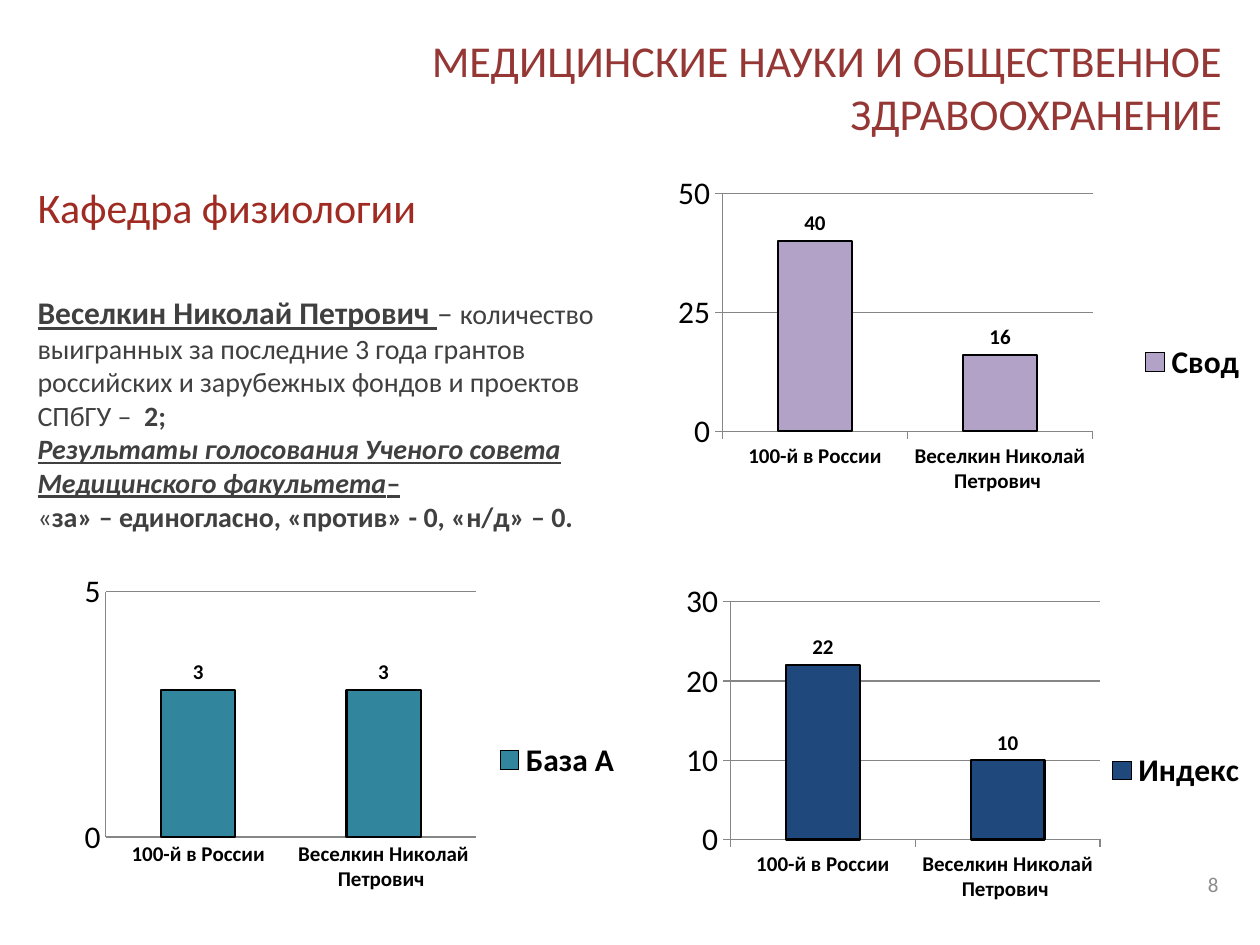
from pptx import Presentation, util as u
from pptx.chart.data import CategoryChartData
from pptx.dml.color import RGBColor
from pptx.enum import chart as charts, text
from pptx.oxml import parse_xml
from pptx.oxml.ns import nsdecls

THEME = {
    "font": "Calibri",
    "title": "953735", "heading": "9F2B22", "body": "404040",
    "number": "8C8C8C", "ink": "000000", "grid": "868686",
    "title_size": 25.2, "heading_size": 24, "lead_size": 18,
    "body_size": 16, "axis_size": 18, "small_size": 12,
}

TITLE = "МЕДИЦИНСКИЕ НАУКИ И ОБЩЕСТВЕННОЕ ЗДРАВООХРАНЕНИЕ"
HEADING = "Кафедра физиологии"
LEAD = {"size": THEME["lead_size"]}
BODY = [
    [("Веселкин Николай Петрович ", {**LEAD, "bold": True, "underline": True}),
     ("– ", LEAD),
     ("количество выигранных за последние 3 года грантов российских и "
      "зарубежных фондов и проектов СПбГУ – ", {}),
     (" 2;", {"bold": True})],
    [("Результаты голосования Ученого совета Медицинского факультета",
      {"bold": True, "italic": True, "underline": True}),
     ("–", {"bold": True, "underline": True})],
    [("«", {}),
     ("за» – единогласно, «против» - 0, «н/д» – 0.", {"bold": True})],
]
CATEGORIES = ["100-й в России", "Веселкин Николай Петрович "]
CHART_SIZE = (4.92, 3.15)
# plot is the inner plot area as fractions of the chart: left, top, width, height
CHARTS = [
    {"name": "Индекс", "values": (22, 10), "color": "1F497D", "at": (5.08, 4.54),
     "top": 30, "step": 10, "ticks": True, "plot": (0.146, 0.075, 0.596, 0.599)},
    {"name": "База А", "values": (3, 3), "color": "31859C", "at": (0.12, 4.46),
     "top": 5, "step": 5, "ticks": False, "plot": (0.146, 0.075, 0.598, 0.618)},
    {"name": "Свод", "values": (40, 16), "color": "B3A2C7", "at": (5.08, 1.3),
     "top": 50, "step": 25, "ticks": True, "plot": (0.133, 0.075, 0.597, 0.599)},
]


def style(font, size, color, bold=False, italic=False, underline=False):
    font.name = THEME["font"]
    font.size = u.Pt(size)
    font.color.rgb = RGBColor.from_string(color)
    font.bold, font.italic, font.underline = bold, italic, underline


def write(box, paragraphs, size, color, align=text.PP_ALIGN.LEFT,
          anchor=text.MSO_ANCHOR.TOP):
    """Fill a box with paragraphs, each a list of (words, format) spans."""
    frame = box.text_frame
    frame.word_wrap = True
    frame.auto_size = text.MSO_AUTO_SIZE.NONE
    frame.vertical_anchor = anchor
    for index, spans in enumerate(paragraphs):
        para = frame.add_paragraph() if index else frame.paragraphs[0]
        para.alignment = align
        for words, look in spans:
            span = para.add_run()
            span.text = words
            style(span.font, **{"size": size, "color": color, **look})


def place(box, left, top, width, height):
    box.left, box.top = u.Inches(left), u.Inches(top)
    box.width, box.height = u.Inches(width), u.Inches(height)


def add_box(page, *area):
    return page.shapes.add_textbox(*map(u.Inches, area))


def outline(line, color, width):
    line.color.rgb = RGBColor.from_string(color)
    line.width = u.Pt(width)


def fix_plot_area(chart, fractions):
    parts = "".join(f'<c:{key}Mode val="edge"/>' for key in "xy")
    parts += "".join(f'<c:{key} val="{value}"/>'
                     for key, value in zip("xywh", fractions))
    area = chart._chartSpace.chart.plotArea
    for old in area.findall("{*}layout"):
        area.remove(old)
    area.insert(0, parse_xml(
        f'<c:layout {nsdecls("c")}><c:manualLayout><c:layoutTarget val="inner"/>'
        f'{parts}</c:manualLayout></c:layout>'))


def add_column_chart(page, item):
    data = CategoryChartData()
    data.categories = CATEGORIES
    data.add_series(item["name"], item["values"])
    chart = page.shapes.add_chart(
        charts.XL_CHART_TYPE.COLUMN_CLUSTERED,
        *map(u.Inches, item["at"] + CHART_SIZE), data).chart
    style(chart.font, THEME["axis_size"], THEME["ink"])
    chart.has_title = False
    chart.has_legend = True
    chart.legend.position = charts.XL_LEGEND_POSITION.RIGHT
    chart.legend.include_in_layout = False
    style(chart.legend.font, THEME["axis_size"], THEME["ink"], bold=True)

    tick = charts.XL_TICK_MARK.OUTSIDE if item["ticks"] else charts.XL_TICK_MARK.NONE
    for axis in (chart.category_axis, chart.value_axis):
        axis.major_tick_mark = tick
        axis.minor_tick_mark = charts.XL_TICK_MARK.NONE
        outline(axis.format.line, THEME["grid"], 0.75)
    style(chart.category_axis.tick_labels.font, THEME["small_size"],
          THEME["ink"], bold=True)
    scale = chart.value_axis
    scale.minimum_scale, scale.maximum_scale = 0, item["top"]
    scale.major_unit = item["step"]
    scale.has_major_gridlines = True
    outline(scale.major_gridlines.format.line, THEME["grid"], 0.75)

    plot = chart.plots[0]
    plot.gap_width = 150
    plot.vary_by_categories = False
    series = plot.series[0]
    series.format.fill.solid()
    series.format.fill.fore_color.rgb = RGBColor.from_string(item["color"])
    outline(series.format.line, THEME["ink"], 1.25)
    labels = series.data_labels
    labels.show_value = True
    labels.position = charts.XL_LABEL_POSITION.OUTSIDE_END
    style(labels.font, THEME["small_size"], THEME["ink"], bold=True)
    fix_plot_area(chart, item["plot"])


def main():
    deck = Presentation()
    deck.slide_width, deck.slide_height = u.Inches(10), u.Inches(7.5)
    page = deck.slides.add_slide(deck.slide_layouts[5])
    middle, right = text.MSO_ANCHOR.MIDDLE, text.PP_ALIGN.RIGHT

    title = page.shapes.title
    place(title, 2.56, 0.3, 7.24, 0.77)
    write(title, [[(TITLE, {})]], THEME["title_size"], THEME["title"],
          align=right, anchor=middle)
    for item in CHARTS:
        add_column_chart(page, item)
    write(add_box(page, 7.44, 6.82, 2.33, 0.4), [[("8", {})]],
          THEME["small_size"], THEME["number"], align=right, anchor=middle)
    write(add_box(page, 0.2, 1.39, 4.25, 0.5), [[(HEADING, {})]],
          THEME["heading_size"], THEME["heading"], anchor=middle)
    write(add_box(page, 0.2, 2.28, 4.73, 2.02), BODY,
          THEME["body_size"], THEME["body"])
    deck.save("out.pptx")


if __name__ == "__main__":
    main()
